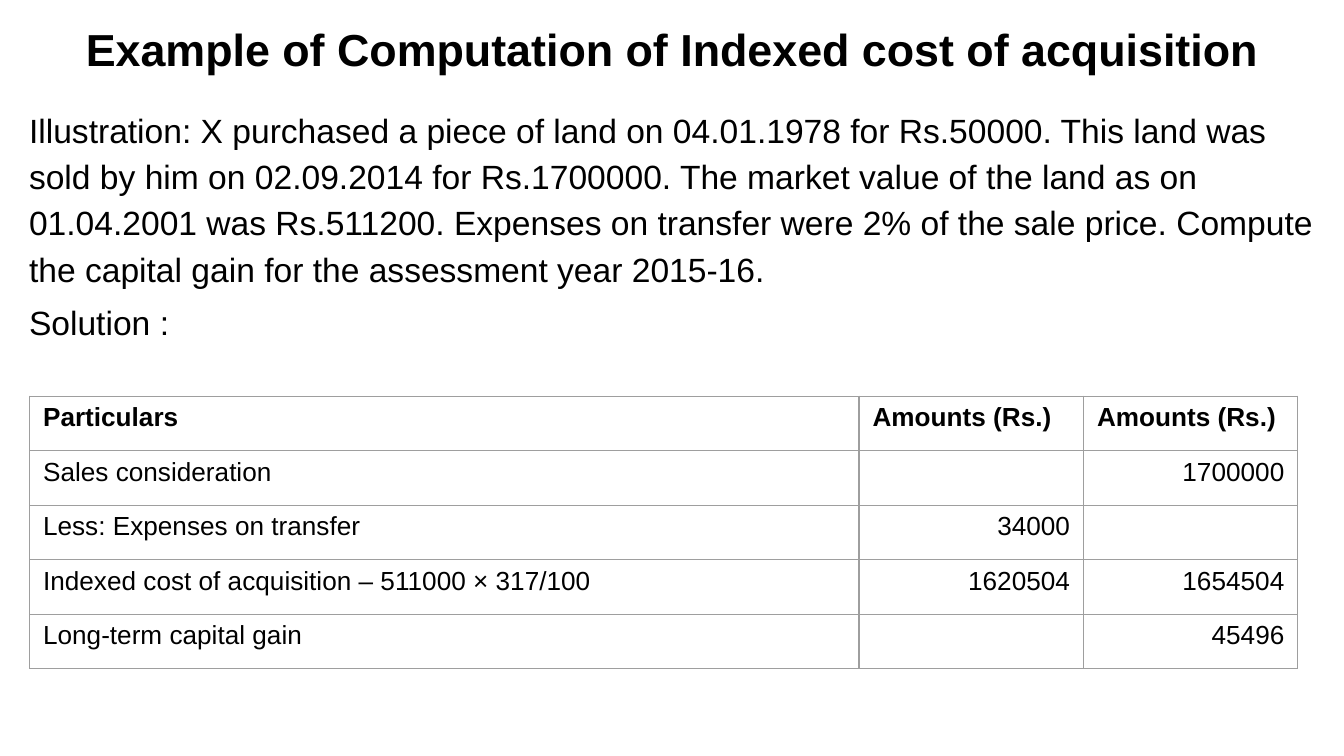
from lxml.etree import SubElement
from pptx import Presentation
from pptx.dml.color import RGBColor
from pptx.enum.text import MSO_ANCHOR, PP_ALIGN
from pptx.oxml.ns import qn
from pptx.util import Cm, Pt

BLACK = RGBColor(0x00, 0x00, 0x00)
WHITE = RGBColor(0xFF, 0xFF, 0xFF)
GREY = RGBColor(0x9E, 0x9E, 0x9E)
FONT = "Arial"

TITLE = "Example of Computation of Indexed cost of acquisition"
BODY = [
    "Illustration: X purchased a piece of land on 04.01.1978 for Rs.50000. "
    "This land was sold by him on 02.09.2014 for Rs.1700000. The market value "
    "of the land as on 01.04.2001 was Rs.511200. Expenses on transfer were 2% "
    "of the sale price. Compute the capital gain for the assessment year 2015-16.",
    "Solution :",
]
ROWS = [
    ("Particulars", "Amounts (Rs.)", "Amounts (Rs.)"),
    ("Sales consideration", "", "1700000"),
    ("Less: Expenses on transfer", "34000", ""),
    ("Indexed cost of acquisition – 511000 × 317/100", "1620504", "1654504"),
    ("Long-term capital gain", "", "45496"),
]
COLUMN_SHARES = (0.654, 0.177, 0.169)


def add_span(para, text, size, bold=False):
    """Append one styled run to a paragraph."""
    span = para.add_run()
    span.text = text
    span.font.name = FONT
    span.font.size = Pt(size)
    span.font.bold = bold
    span.font.color.rgb = BLACK


def add_title(slide, left, top, width, height):
    """Place the centred heading in the given box."""
    frame = slide.shapes.add_textbox(left, top, width, height).text_frame
    frame.word_wrap = True
    frame.vertical_anchor = MSO_ANCHOR.MIDDLE
    para = frame.paragraphs[0]
    para.alignment = PP_ALIGN.CENTER
    add_span(para, TITLE, 24, bold=True)


def add_illustration(slide, left, top, width, height):
    """Place the worked problem in the given box."""
    frame = slide.shapes.add_textbox(left, top, width, height).text_frame
    frame.word_wrap = True
    for index, text in enumerate(BODY):
        para = frame.add_paragraph() if index else frame.paragraphs[0]
        para.line_spacing = 1.15
        para.space_before = Pt(3.6)
        para._p.get_or_add_pPr().set("marL", str(Cm(0.3)))
        add_span(para, text, 18)


def add_borders(cell):
    """Draw a thin grey line on every side of a cell."""
    properties = cell._tc.get_or_add_tcPr()
    for position, side in enumerate(("a:lnL", "a:lnR", "a:lnT", "a:lnB")):
        line = SubElement(properties, qn(side), w=str(Pt(0.75)))
        fill = SubElement(line, qn("a:solidFill"))
        SubElement(fill, qn("a:srgbClr"), val=str(GREY))
        properties.insert(position, line)


def add_computation(slide, left, top, width, height):
    """Place the capital gain table in the given box."""
    table = slide.shapes.add_table(
        len(ROWS), len(COLUMN_SHARES), left, top, width, height
    ).table
    table.horz_banding = False
    for column, share in zip(table.columns, COLUMN_SHARES):
        column.width = int(width * share)
    for row_index, texts in enumerate(ROWS):
        table.rows[row_index].height = height // len(ROWS)
        for column_index, text in enumerate(texts):
            cell = table.cell(row_index, column_index)
            cell.fill.solid()
            cell.fill.fore_color.rgb = WHITE
            add_borders(cell)
            para = cell.text_frame.paragraphs[0]
            para.font.size = Pt(14)
            if text:
                is_amount = row_index > 0 and column_index > 0
                para.alignment = PP_ALIGN.RIGHT if is_amount else PP_ALIGN.LEFT
                add_span(para, text, 14, bold=row_index == 0)


def main():
    """Build and save the deck."""
    deck = Presentation()
    deck.slide_width, deck.slide_height = Cm(25.4), Cm(14.29)
    slide = deck.slides.add_slide(deck.slide_layouts[6])
    add_title(slide, Cm(0), Cm(0), deck.slide_width, Cm(1.83))
    add_illustration(slide, Cm(0), Cm(1.83), Cm(25.12), Cm(12.12))
    add_computation(slide, Cm(0.56), Cm(7.49), Cm(23.97), Cm(5.15))
    deck.save("out.pptx")


if __name__ == "__main__":
    main()
